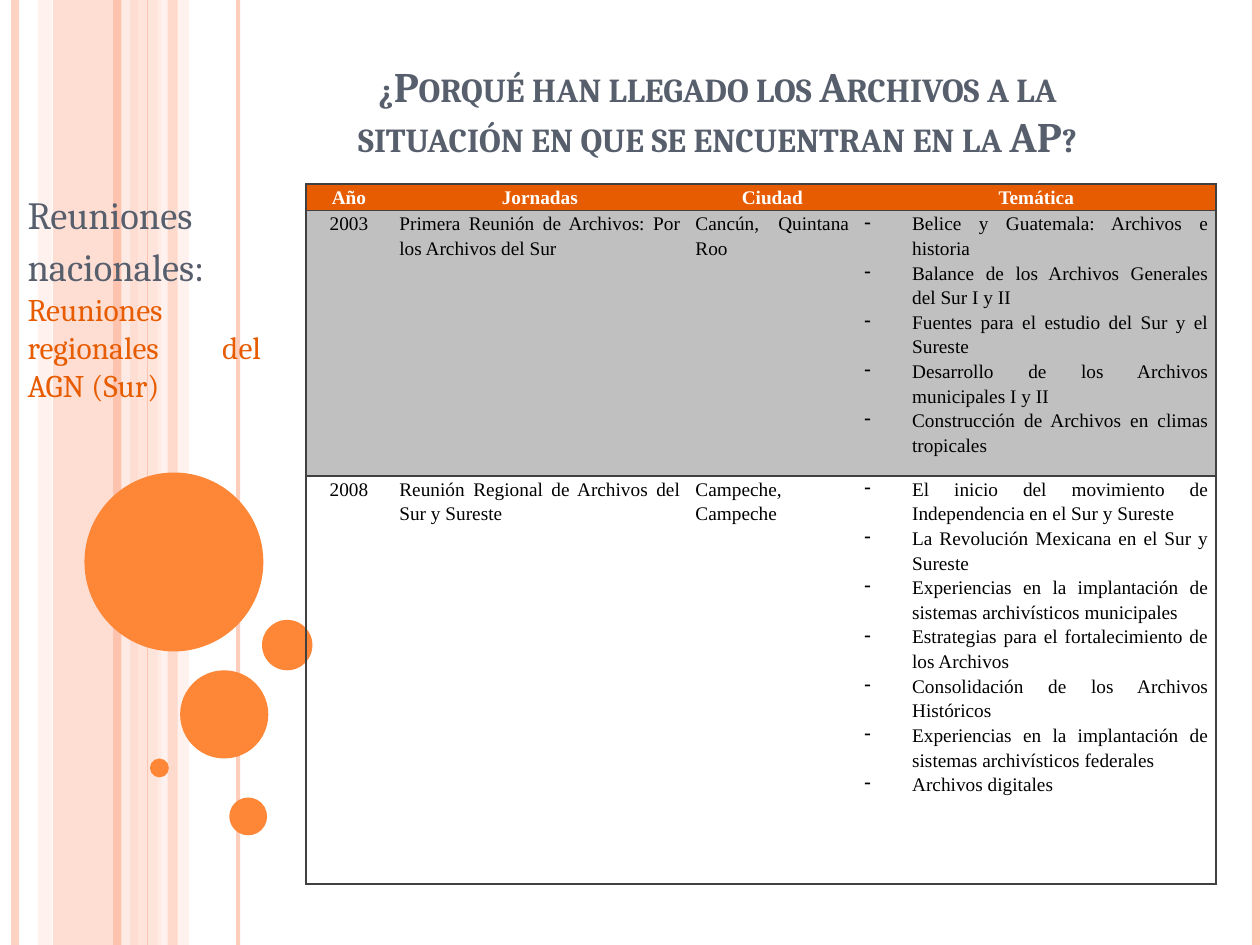
"""Build the slide on the regional archive meetings of the South."""
from dataclasses import dataclass
from typing import NamedTuple

from lxml.etree import SubElement
from pptx import Presentation
from pptx.dml.color import RGBColor as Rgb
from pptx.enum.shapes import MSO_CONNECTOR as Link, MSO_SHAPE as Form
from pptx.enum.text import MSO_ANCHOR as Anchor, PP_ALIGN as Align
from pptx.oxml.ns import qn
from pptx.util import Inches, Pt


@dataclass(frozen=True)
class Theme:
    peach: str = "FEC3AE"
    blush: str = "FFD9CE"
    pale: str = "FFEDE8"
    orange: str = "FE8637"
    rust: str = "E75C01"
    slate: str = "575F6D"
    gray: str = "C0C0C0"
    edge: str = "404040"
    white: str = "FFFFFF"
    black: str = "000000"
    serif: str = "Cambria"
    body: str = "Times New Roman"
    title: float = 24
    lead: float = 22
    gap: float = 25
    sub: float = 18
    cell: float = 11


class Band(NamedTuple):
    left: float
    wide: float
    color: str
    alpha: int


class Rule(NamedTuple):
    x: float
    width: float
    color: str
    alpha: int = 100


class Dot(NamedTuple):
    left: float
    top: float
    size: float


class Part(NamedTuple):
    text: str
    size: float
    color: str
    font: str
    bold: bool = False


class Row(NamedTuple):
    year: str
    event: str
    city: str
    topics: list[str]
    fill: str | None
    high: float


T = Theme()
TALL = 7.5
BANDS = [
    Band(0.42, 0.67, T.peach, 54), Band(0.3, 0.11, T.blush, 36),
    Band(1.08, 0.2, T.blush, 70), Band(1.25, 0.25, T.pale, 71),
]
RULES = [
    Rule(0.12, 4.5, T.peach, 73), Rule(1, 4.5, T.pale, 83),
    Rule(0.93, 4.5, T.peach), Rule(1.89, 2.25, T.peach, 82),
    Rule(1.17, 0.75, T.peach), Rule(9.97, 4.5, T.peach),
]
STRIP = Band(1.33, 0.08, T.peach, 51)
DOTS = [
    Dot(0.67, 3.75, 1.42), Dot(1.43, 5.32, 0.7), Dot(1.19, 6.02, 0.15),
    Dot(1.82, 6.33, 0.3), Dot(2.08, 4.92, 0.4),
]
HEADS = ["Año", "Jornadas", "Ciudad", "Temática"]
COLS = [0.68, 2.35, 1.34, 2.85]
ROWS = [
    Row("2003", "Primera Reunión de Archivos: Por los Archivos del Sur", "Cancún, Quintana Roo", [
        "Belice y Guatemala: Archivos e historia",
        "Balance de los Archivos Generales del Sur I y II",
        "Fuentes para el estudio del Sur y el Sureste",
        "Desarrollo de los Archivos municipales I y II",
        "Construcción de Archivos en climas tropicales",
    ], T.gray, 1.95),
    Row("2008", "Reunión Regional de Archivos del Sur y Sureste", "Campeche, Campeche", [
        "El inicio del movimiento de Independencia en el Sur y Sureste",
        "La Revolución Mexicana en el Sur y Sureste",
        "Experiencias en la implantación de sistemas archivísticos municipales",
        "Estrategias para el fortalecimiento de los Archivos",
        "Consolidación de los Archivos Históricos",
        "Experiencias en la implantación de sistemas archivísticos federales",
        "Archivos digitales",
    ], None, 3.24),
]


def apply(item, form: dict) -> None:
    for name, value in form.items():
        setattr(item, name, value)


def fade(item, alpha: int) -> None:
    if alpha < 100:
        tint = item._element.spPr.find(".//" + qn("a:srgbClr"))
        SubElement(tint, qn("a:alpha")).set("val", str(alpha * 1000))


def add_form(slide, kind: Form, box: tuple, color: str, alpha: int = 100) -> None:
    item = slide.shapes.add_shape(kind, *map(Inches, box))
    item.shadow.inherit = False
    item.fill.solid()
    item.fill.fore_color.rgb = Rgb.from_string(color)
    item.line.fill.background()
    fade(item, alpha)


def add_band(slide, band: Band) -> None:
    add_form(slide, Form.RECTANGLE, (band.left, 0, band.wide, TALL), band.color, band.alpha)


def add_rule(slide, rule: Rule) -> None:
    ends = map(Inches, (rule.x, 0, rule.x, TALL))
    item = slide.shapes.add_connector(Link.STRAIGHT, *ends)
    item.line.width = Pt(rule.width)
    item.line.color.rgb = Rgb.from_string(rule.color)
    fade(item, rule.alpha)
    SubElement(item._element.spPr, qn("a:effectLst"))


def add_run(para, part: Part):
    run = para.add_run()
    run.text = part.text
    apply(run.font, {"size": Pt(part.size), "name": part.font, "bold": part.bold})
    run.font.color.rgb = Rgb.from_string(part.color)
    return run


def add_text(slide, box: tuple, parts: list[Part], align: Align, anchor: Anchor) -> list:
    frame = slide.shapes.add_textbox(*map(Inches, box)).text_frame
    apply(frame, {"word_wrap": True, "vertical_anchor": anchor})
    para = frame.paragraphs[0]
    para.alignment = align
    return [add_run(para, part) for part in parts]


def add_edge(cell, sides: str) -> None:
    props = cell._tc.get_or_add_tcPr()
    for side in sides:
        line = SubElement(props, qn("a:ln" + side), w=str(Pt(1)))
        fill = SubElement(line, qn("a:solidFill"))
        SubElement(fill, qn("a:srgbClr"), val=T.edge)


def fill_cell(cell, texts: list[str], align: Align, sides: str, fill: str | None,
              head: bool = False, list_: bool = False) -> None:
    side = Inches(0.06)
    apply(cell, {"margin_left": side, "margin_right": side, "margin_top": 0, "margin_bottom": 0})
    add_edge(cell, sides)
    if fill:
        cell.fill.solid()
        cell.fill.fore_color.rgb = Rgb.from_string(fill)
    else:
        cell.fill.background()
    frame = cell.text_frame
    for i, text in enumerate(texts):
        para = frame.add_paragraph() if i else frame.paragraphs[0]
        apply(para, {"alignment": align, "line_spacing": 1.15})
        if list_:
            props = para._p.get_or_add_pPr()
            props.set("marL", str(Inches(0.38)))
            props.set("indent", str(-Inches(0.38)))
            SubElement(props, qn("a:buChar"), char="-")
        add_run(para, Part(text, T.cell, T.white if head else T.black, T.body, head))


def add_grid(slide) -> None:
    highs = [0.2] + [row.high for row in ROWS]
    box = map(Inches, (2.43, 1.46, sum(COLS), sum(highs)))
    grid = slide.shapes.add_table(len(highs), len(COLS), *box).table
    apply(grid, {"first_row": False, "horz_banding": False})
    style = grid._tbl.tblPr.find(qn("a:tableStyleId"))
    style.text = "{2D5ABB26-0587-4C30-8999-92F81FD0307C}"
    for col, wide in zip(grid.columns, COLS):
        col.width = Inches(wide)
    for row, high in zip(grid.rows, highs):
        row.height = Inches(high)
    edges = ["LTB", "TB", "TB", "RTB"]
    for c, sides in enumerate(edges):
        fill_cell(grid.cell(0, c), [HEADS[c]], Align.CENTER, sides, T.rust, head=True)
        for r, row in enumerate(ROWS, 1):
            texts = ([row.year], [row.event], [row.city], row.topics)[c]
            align = Align.JUSTIFY if c else Align.CENTER
            fill_cell(grid.cell(r, c), texts, align, sides, row.fill, list_=c == 3)


def main() -> None:
    deck = Presentation()
    apply(deck, {"slide_width": Inches(10), "slide_height": Inches(TALL)})
    slide = deck.slides.add_slide(deck.slide_layouts[6])
    for band in BANDS:
        add_band(slide, band)
    for rule in RULES:
        add_rule(slide, rule)
    add_band(slide, STRIP)
    for dot in DOTS:
        add_form(slide, Form.OVAL, (dot.left, dot.top, dot.size, dot.size), T.orange)
    title = "¿Porqué han llegado los Archivos a la situación en que se encuentran en la AP?"
    runs = add_text(slide, (2.32, 0.29, 6.75, 1.04),
                    [Part(title, T.title, T.slate, T.serif, True)], Align.CENTER, Anchor.BOTTOM)
    runs[0].font._element.set("cap", "small")
    add_text(slide, (0.12, 1.47, 2.05, 5.28), [
        Part("Reuniones nacionales:", T.lead, T.slate, T.serif),
        Part(" ", T.gap, T.slate, T.serif),
        Part("Reuniones regionales del AGN (Sur)", T.sub, T.rust, T.serif),
    ], Align.JUSTIFY, Anchor.TOP)
    add_grid(slide)
    deck.save("out.pptx")


if __name__ == "__main__":
    main()
